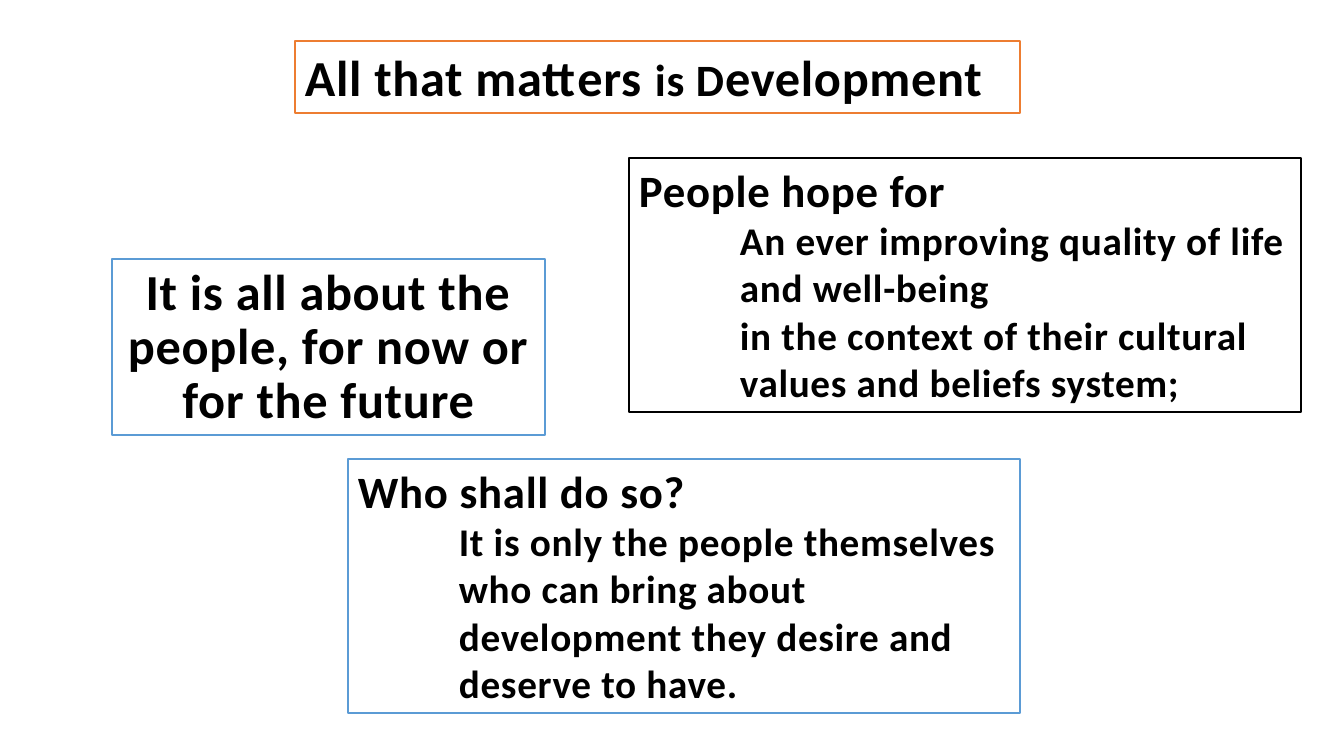
from lxml.etree import fromstring
from pptx import Presentation
from pptx.dml.color import RGBColor
from pptx.enum.text import MSO_ANCHOR, MSO_AUTO_SIZE, PP_ALIGN
from pptx.oxml.ns import qn
from pptx.util import Emu, Pt

PX_PER_INCH = 100.8
FONT = "Calibri"
COLORS = {"text": "000000", "paper": "FFFFFF", "blue": "5B9BD5", "orange": "ED7D31"}
NS = 'xmlns:a="http://schemas.openxmlformats.org/drawingml/2006/main"'
OUTLINE = f'<a:ln {NS} w="9525"><a:solidFill><a:srgbClr val="{COLORS["text"]}"/></a:solidFill></a:ln>'
GLOW = (
    f'<a:effectLst {NS}><a:outerShdw blurRad="50800" dist="38100" dir="2700000" algn="tl">'
    f'<a:srgbClr val="{COLORS["blue"]}"><a:alpha val="40000"/></a:srgbClr></a:outerShdw></a:effectLst>'
)


def px(n):
    return Emu(round(n * 914400 / PX_PER_INCH))


def rgb(name):
    return RGBColor.from_string(COLORS[name])


def add_run(p, text, size):
    r = p.add_run()
    r.text = text
    r.font.size = Pt(size)
    r.font.bold = True
    r.font.name = FONT
    r.font.color.rgb = rgb("text")
    rPr = r.font._element
    rPr.set("spc", "50")
    rPr.insert(0, fromstring(OUTLINE))
    rPr.find(qn("a:solidFill")).addnext(fromstring(GLOW))


def write(p, *runs, align=PP_ALIGN.LEFT, indent=0, spacing=1.0):
    p.alignment = align
    p.line_spacing = spacing
    p.space_before = Pt(0)
    if indent:
        p.level = 2
        pPr = p._p.get_or_add_pPr()
        pPr.set("marL", str(px(indent)))
        pPr.set("indent", "0")
    for text, size in runs:
        add_run(p, text, size)


def style_box(sp, line):
    sp.fill.solid()
    sp.fill.fore_color.rgb = rgb("paper")
    sp.line.color.rgb = rgb(line)
    sp.line.width = Pt(1)
    sp.text_frame.word_wrap = True


def add_box(s, x, y, w, h, line):
    sp = s.shapes.add_textbox(px(x), px(y), px(w), px(h))
    style_box(sp, line)
    sp.text_frame.auto_size = MSO_AUTO_SIZE.SHAPE_TO_FIT_TEXT
    return sp.text_frame


def add_title(s, text, x, y, w, h):
    sp = s.shapes.title
    sp.left, sp.top, sp.width, sp.height = px(x), px(y), px(w), px(h)
    style_box(sp, "blue")
    tf = sp.text_frame
    tf.auto_size = MSO_AUTO_SIZE.NONE
    tf.vertical_anchor = MSO_ANCHOR.BOTTOM
    write(tf.paragraphs[0], (text, 36), align=PP_ALIGN.CENTER, spacing=0.9)


def add_statement(s, heading, points, x, y, line):
    tf = add_box(s, x, y, 672, 254, line)
    write(tf.paragraphs[0], (heading, 32))
    for point in points:
        write(tf.add_paragraph(), (point, 28), indent=101)


def main():
    prs = Presentation()
    prs.slide_width, prs.slide_height = px(1344), px(756)
    s = prs.slides.add_slide(prs.slide_layouts[5])
    add_title(s, "It is all about the people, for now or for the future", 112, 259, 433, 176)
    add_statement(s, "People hope for", [
        "An ever improving quality of life and well-being",
        "in the context of their cultural values and beliefs system;",
    ], 629, 158, "text")
    banner = add_box(s, 295, 41, 725, 72, "orange")
    write(banner.paragraphs[0], ("All that matters ", 36), ("is D", 32), ("evelopment", 36))
    add_statement(s, "Who shall do so?", [
        "It is only the people themselves who can bring about development they desire and deserve to have.",
    ], 348, 459, "blue")
    prs.save("out.pptx")


if __name__ == "__main__":
    main()
